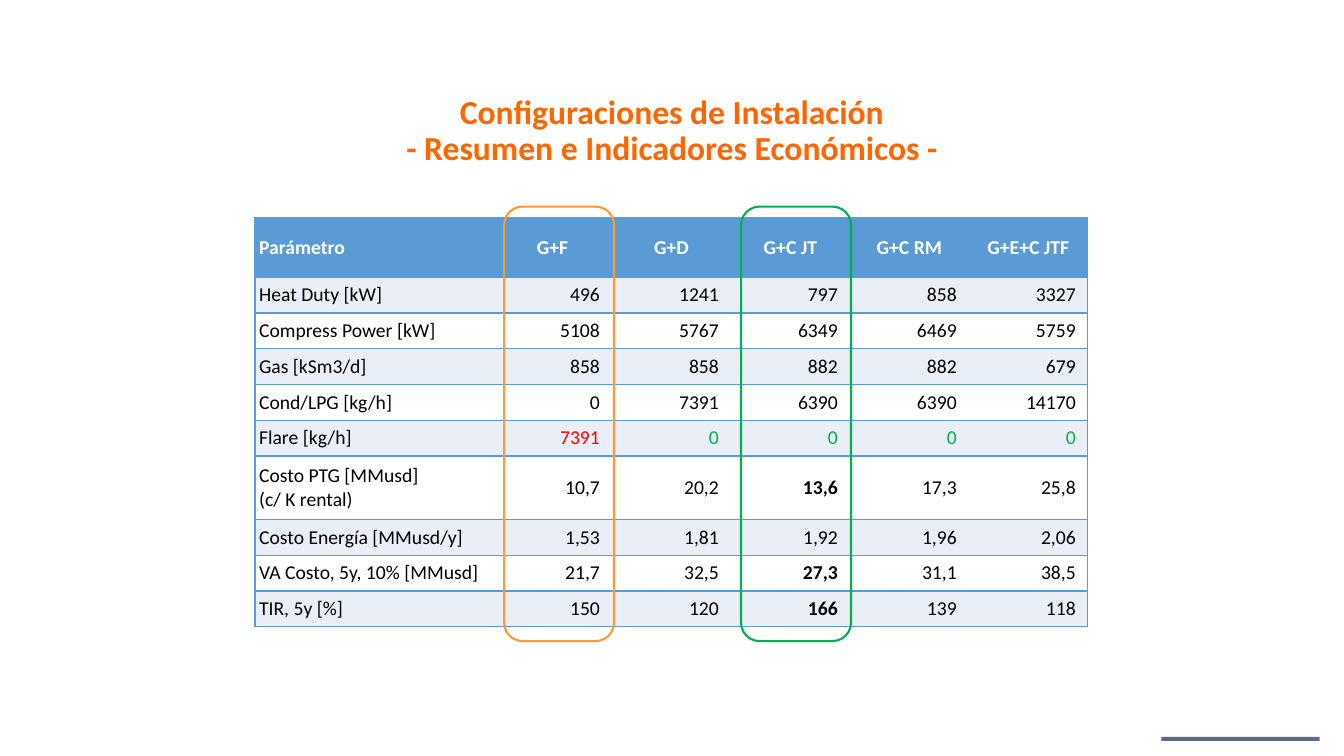
from dataclasses import dataclass

from lxml.etree import SubElement
from pptx import Presentation
from pptx.dml.color import RGBColor
from pptx.enum.shapes import MSO_SHAPE
from pptx.enum.text import MSO_ANCHOR, PP_ALIGN
from pptx.oxml.ns import qn
from pptx.shapes.autoshape import Shape
from pptx.slide import Slide
from pptx.table import _Cell
from pptx.text.text import _Paragraph
from pptx.util import Inches, Pt

FONT = "Calibri"
COLORS = {
    "title": "FF6600",
    "header": "5B9BD5",
    "band": "EAEFF7",
    "white": "FFFFFF",
    "black": "000000",
    "flaring": "FF0000",
    "green": "00B050",
    "orange": "FF9933",
    "footer": "001C50",
}
TITLE_LINES = ["Configuraciones de Instalación", "- Resumen e Indicadores Económicos -"]
HEADERS = ["Parámetro", "G+F", "G+D", "G+C JT", "G+C RM", "G+E+C JTF"]
LABEL_WIDTH, VALUE_WIDTH = 2.36, 1.18
HEADER_HEIGHT = 0.59
BEST_COLUMN = 3


@dataclass
class Parameter:
    label: str
    values: list[str]
    height: float = 0.355
    best_is_bold: bool = False
    is_flare: bool = False


@dataclass
class Highlight:
    left: float
    color: str


PARAMETERS = [
    Parameter("Heat Duty [kW]", ["496", "1241", "797", "858", "3327"]),
    Parameter("Compress Power [kW]", ["5108", "5767", "6349", "6469", "5759"]),
    Parameter("Gas [kSm3/d]", ["858", "858", "882", "882", "679"]),
    Parameter("Cond/LPG [kg/h]", ["0", "7391", "6390", "6390", "14170"]),
    Parameter("Flare [kg/h]", ["7391", "0", "0", "0", "0"], is_flare=True),
    Parameter("Costo PTG [MMusd]\n(c/ K rental)", ["10,7", "20,2", "13,6", "17,3", "25,8"],
              height=0.63, best_is_bold=True),
    Parameter("Costo Energía [MMusd/y]", ["1,53", "1,81", "1,92", "1,96", "2,06"]),
    Parameter("VA Costo, 5y, 10% [MMusd]", ["21,7", "32,5", "27,3", "31,1", "38,5"],
              best_is_bold=True),
    Parameter("TIR, 5y [%]", ["150", "120", "166", "139", "118"], best_is_bold=True),
]
HIGHLIGHTS = [Highlight(5.0, "orange"), Highlight(7.35, "green")]


def rgb(color: str) -> RGBColor:
    return RGBColor.from_string(COLORS[color])


def add_run(paragraph: _Paragraph, text: str, size: float, color: str, bold: bool) -> None:
    run = paragraph.add_run()
    run.text = text
    run.font.name = FONT
    run.font.size = Pt(size)
    run.font.bold = bold
    run.font.color.rgb = rgb(color)


def add_plain_shape(slide: Slide, preset: MSO_SHAPE, left: float, top: float,
                    width: float, height: float) -> Shape:
    shape = slide.shapes.add_shape(preset, Inches(left), Inches(top), Inches(width), Inches(height))
    shape.shadow.inherit = False
    return shape


def add_footer_bar(slide: Slide) -> None:
    shape = add_plain_shape(slide, MSO_SHAPE.RECTANGLE, 11.52, 7.31, 1.57, 0.04)
    shape.fill.solid()
    shape.fill.fore_color.rgb = rgb("footer")
    shape.line.fill.background()
    color = shape.fill._xPr.find(qn("a:solidFill"))[0]
    SubElement(color, qn("a:alpha"), val="65000")


def add_title(slide: Slide) -> None:
    box = slide.shapes.add_textbox(Inches(0.76), Inches(0.91), Inches(11.81), Inches(0.79))
    frame = box.text_frame
    frame.word_wrap = True
    frame.vertical_anchor = MSO_ANCHOR.MIDDLE
    frame.margin_left = frame.margin_right = Inches(0.08)
    frame.margin_top = frame.margin_bottom = Inches(0.04)
    paragraph = frame.paragraphs[0]
    paragraph.alignment = PP_ALIGN.CENTER
    paragraph.line_spacing = 0.9
    for index, line in enumerate(TITLE_LINES):
        if index:
            paragraph.add_line_break()
        add_run(paragraph, line, 24, "title", True)


def set_borders(cell: _Cell, sides: str) -> None:
    properties = cell._tc.get_or_add_tcPr()
    for side in "LRTB":
        line = SubElement(properties, qn(f"a:ln{side}"), w=str(Pt(1)))
        if side in sides:
            fill = SubElement(line, qn("a:solidFill"))
            SubElement(fill, qn("a:srgbClr"), val=COLORS["header"])
        else:
            SubElement(line, qn("a:noFill"))


def fill_cell(cell: _Cell, text: str, column: int, fill: str, color: str, bold: bool,
              alignment: PP_ALIGN) -> None:
    last = len(HEADERS) - 1
    set_borders(cell, "TB" + ("L" if column == 0 else "") + ("R" if column == last else ""))
    cell.fill.solid()
    cell.fill.fore_color.rgb = rgb(fill)
    cell.vertical_anchor = MSO_ANCHOR.MIDDLE
    side = 0.05 if alignment == PP_ALIGN.CENTER else 0.04
    cell.margin_left = Inches(side)
    cell.margin_right = Inches(0.12 if alignment == PP_ALIGN.RIGHT else side)
    cell.margin_top = cell.margin_bottom = Inches(0.03 if alignment == PP_ALIGN.CENTER else 0.04)
    frame = cell.text_frame
    for index, line in enumerate(text.split("\n")):
        paragraph = frame.add_paragraph() if index else frame.paragraphs[0]
        paragraph.alignment = alignment
        add_run(paragraph, line, 14, color, bold)


def add_parameter_table(slide: Slide) -> None:
    widths = [LABEL_WIDTH] + [VALUE_WIDTH] * (len(HEADERS) - 1)
    heights = [HEADER_HEIGHT] + [parameter.height for parameter in PARAMETERS]
    table = slide.shapes.add_table(len(heights), len(widths), Inches(2.53), Inches(2.16),
                                   Inches(sum(widths)), Inches(sum(heights))).table
    table.first_row = table.horz_banding = False
    for column, width in zip(table.columns, widths):
        column.width = Inches(width)
    for row, height in zip(table.rows, heights):
        row.height = Inches(height)

    for column, header in enumerate(HEADERS):
        alignment = PP_ALIGN.CENTER if column else PP_ALIGN.LEFT
        fill_cell(table.cell(0, column), header, column, "header", "white", True, alignment)
    for row, parameter in enumerate(PARAMETERS, start=1):
        fill = "band" if row % 2 else "white"
        for column, text in enumerate([parameter.label, *parameter.values]):
            color = "black"
            if parameter.is_flare and column:
                color = "green" if text == "0" else "flaring"
            bold = parameter.best_is_bold and column == BEST_COLUMN
            alignment = PP_ALIGN.RIGHT if column else PP_ALIGN.LEFT
            fill_cell(table.cell(row, column), text, column, fill, color, bold, alignment)


def add_highlight(slide: Slide, highlight: Highlight) -> None:
    shape = add_plain_shape(slide, MSO_SHAPE.ROUNDED_RECTANGLE, highlight.left, 2.05, 1.09, 4.31)
    shape.fill.background()
    shape.line.color.rgb = rgb(highlight.color)
    shape.line.width = Pt(1.5)


def main() -> None:
    presentation = Presentation()
    presentation.slide_width = Inches(13.33)
    presentation.slide_height = Inches(7.5)
    slide = presentation.slides.add_slide(presentation.slide_layouts[6])
    add_footer_bar(slide)
    add_title(slide)
    add_parameter_table(slide)
    for highlight in HIGHLIGHTS:
        add_highlight(slide, highlight)
    presentation.save("out.pptx")


if __name__ == "__main__":
    main()
